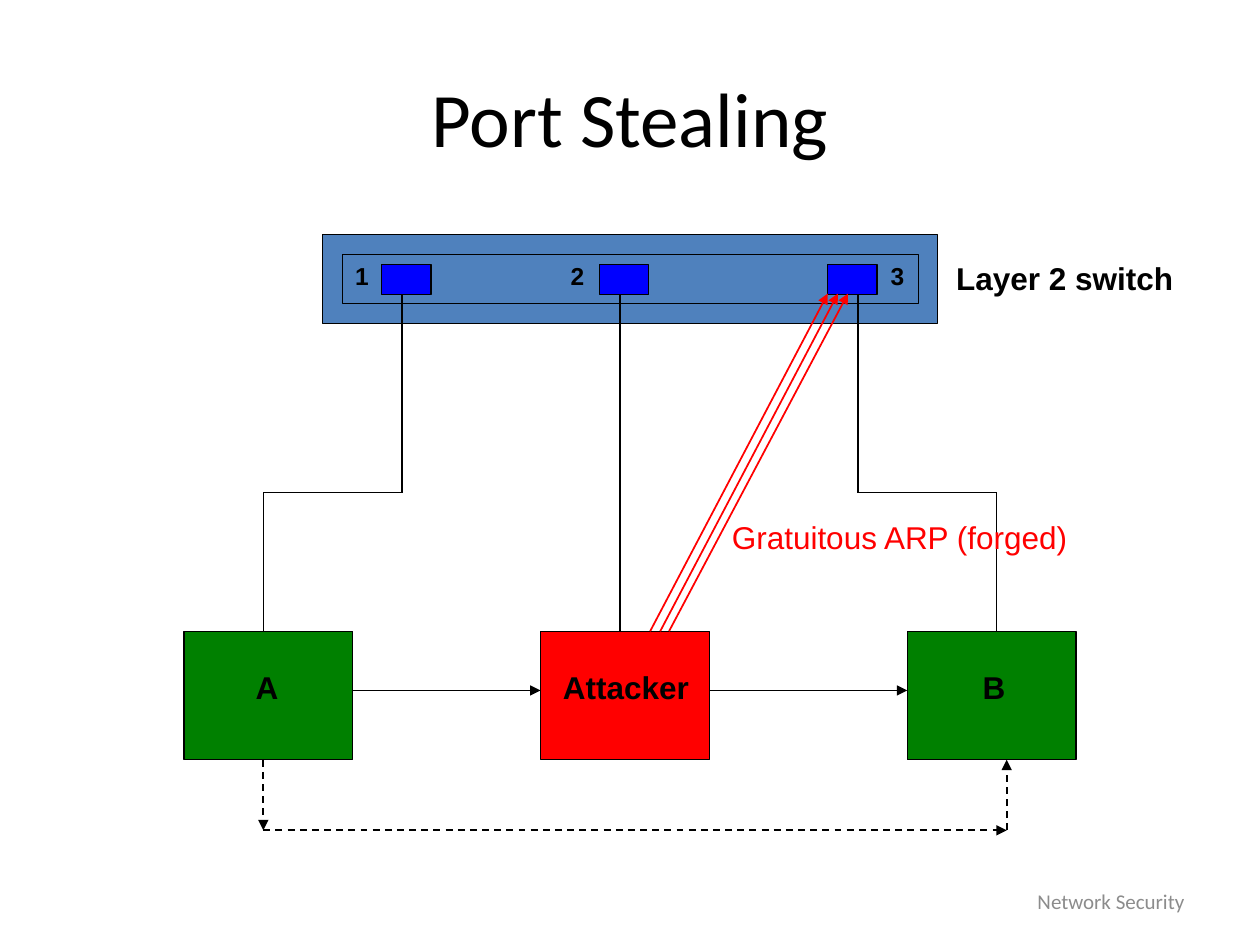
from pptx import Presentation
from pptx.dml.color import RGBColor
from pptx.enum.dml import MSO_LINE
from pptx.enum.shapes import MSO_CONNECTOR, MSO_SHAPE
from pptx.enum.text import MSO_ANCHOR, MSO_AUTO_SIZE, PP_ALIGN
from pptx.oxml.ns import qn
from pptx.util import Inches, Pt
from lxml.etree import SubElement

BLACK = RGBColor(0x00, 0x00, 0x00)
GRAY = RGBColor(0x8C, 0x8C, 0x8C)
STEEL = RGBColor(0x4F, 0x81, 0xBD)
BLUE = RGBColor(0x00, 0x00, 0xFF)
GREEN = RGBColor(0x00, 0x80, 0x00)
RED = RGBColor(0xFF, 0x00, 0x00)

TITLE = "Port Stealing"
FOOTER = "Network Security"

# Switch frames: left, top, width, height
SWITCH = [(2.56, 1.86, 4.88, 0.71), (2.72, 2.02, 4.57, 0.39)]
PORT_TOP, PORT_W, PORT_H = 2.1, 0.39, 0.24
# Label, label left, port left
PORTS = [("1", 2.72, 3.03), ("2", 4.43, 4.76), ("3", 6.97, 6.57)]

HOST_TOP, HOST_W, HOST_H = 5.01, 1.34, 1.02
HOST_BOTTOM = HOST_TOP + HOST_H
# Name, left, fill, label left, label width
HOSTS = [
    ("A", 1.46, GREEN, 1.93, 0.38),
    ("Attacker", 4.29, RED, 4.37, 1.2),
    ("B", 7.2, GREEN, 7.7, 0.38),
]

PLUG_Y, BEND_Y, RELAY_Y, DETOUR_Y = 2.33, 3.91, 5.48, 6.59
CABLES = [
    [(4.92, HOST_TOP), (4.92, PLUG_Y)],
    [(2.09, HOST_TOP), (2.09, BEND_Y), (3.19, BEND_Y), (3.19, PLUG_Y)],
    [(7.91, HOST_TOP), (7.91, BEND_Y), (6.81, BEND_Y), (6.81, PLUG_Y)],
]
DETOUR = [(2.09, HOST_BOTTOM), (2.09, DETOUR_Y), (7.99, DETOUR_Y), (7.99, HOST_BOTTOM)]
# Start x and end x of each forged packet
FORGED = [(5.16, 6.57), (5.24, 6.65), (5.31, 6.73)]


def add_box(s, x, y, w, h, fill):
    box = s.shapes.add_shape(MSO_SHAPE.RECTANGLE, Inches(x), Inches(y), Inches(w), Inches(h))
    box.shadow.inherit = False
    box.fill.solid()
    box.fill.fore_color.rgb = fill
    box.line.color.rgb = BLACK
    box.line.width = Pt(0.75)


def style_text(p, size, color=BLACK, name="Arial", bold=False):
    p.font.size = Pt(size)
    p.font.name = name
    p.font.bold = bold
    p.font.color.rgb = color


def add_label(s, text, x, y, w, h=0.4, size=18, wrap=False, **style):
    tf = s.shapes.add_textbox(Inches(x), Inches(y), Inches(w), Inches(h)).text_frame
    tf.word_wrap = wrap
    tf.auto_size = MSO_AUTO_SIZE.SHAPE_TO_FIT_TEXT
    tf.text = text
    style_text(tf.paragraphs[0], size, **style)


def add_path(s, points, color=BLACK, width=0.75, arrow=False, dashed=False):
    """Draw one straight connector between each pair of neighbouring points."""
    for start, end in zip(points, points[1:]):
        line = s.shapes.add_connector(MSO_CONNECTOR.STRAIGHT, *map(Inches, start + end))
        line.line.color.rgb = color
        line.line.width = Pt(width)
        if dashed:
            line.line.dash_style = MSO_LINE.DASH
        if arrow:
            SubElement(line.line._get_or_add_ln(), qn("a:tailEnd"), type="triangle")
        SubElement(line._element.spPr, qn("a:effectLst"))


def main():
    prs = Presentation()
    prs.slide_width, prs.slide_height = Inches(10), Inches(7.5)
    s = prs.slides.add_slide(prs.slide_layouts[5])

    title = s.shapes.title
    title.left, title.top, title.width, title.height = map(Inches, (0.5, 0.3, 9, 1.25))
    title.text_frame.text = TITLE
    title.text_frame.vertical_anchor = MSO_ANCHOR.MIDDLE
    p = title.text_frame.paragraphs[0]
    p.alignment = PP_ALIGN.CENTER
    style_text(p, 44, name="Calibri")

    tf = s.shapes.add_textbox(Inches(7.17), Inches(6.95), Inches(2.33), Inches(0.4)).text_frame
    tf.word_wrap = True
    tf.vertical_anchor = MSO_ANCHOR.MIDDLE
    tf.text = FOOTER
    tf.paragraphs[0].alignment = PP_ALIGN.RIGHT
    style_text(tf.paragraphs[0], 12, GRAY, "Calibri")

    for frame in SWITCH:
        add_box(s, *frame, STEEL)
    for number, label_x, x in PORTS:
        add_box(s, x, PORT_TOP, PORT_W, PORT_H, BLUE)
        add_label(s, number, label_x, 2.02, 0.34, 0.33, size=14, wrap=True, bold=True)
    add_label(s, "Layer 2 switch", 7.49, 2.01, 1.92, bold=True)

    for name, x, fill, label_x, label_w in HOSTS:
        add_box(s, x, HOST_TOP, HOST_W, HOST_H, fill)
        add_label(s, name, label_x, 5.25, label_w, bold=True)

    for cable in CABLES:
        add_path(s, cable)
    for source, target in zip(HOSTS, HOSTS[1:]):
        add_path(s, [(source[1] + HOST_W, RELAY_Y), (target[1], RELAY_Y)], arrow=True)
    add_path(s, DETOUR, width=1, arrow=True, dashed=True)
    for x1, x2 in FORGED:
        add_path(s, [(x1, HOST_TOP), (x2, PLUG_Y)], RED, width=1, arrow=True)
    add_label(s, "Gratuitous ARP (forged)", 5.71, 4.06, 2.88, color=RED)

    prs.save("out.pptx")


if __name__ == "__main__":
    main()
